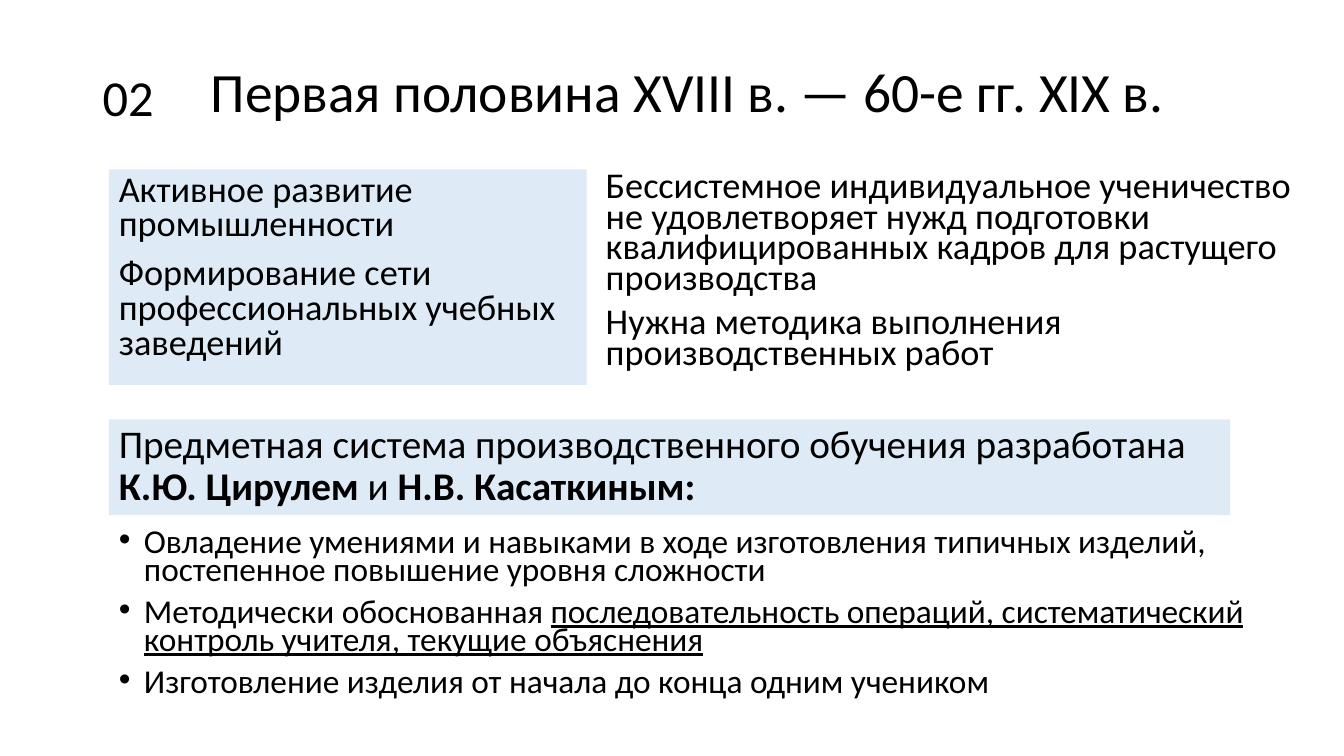
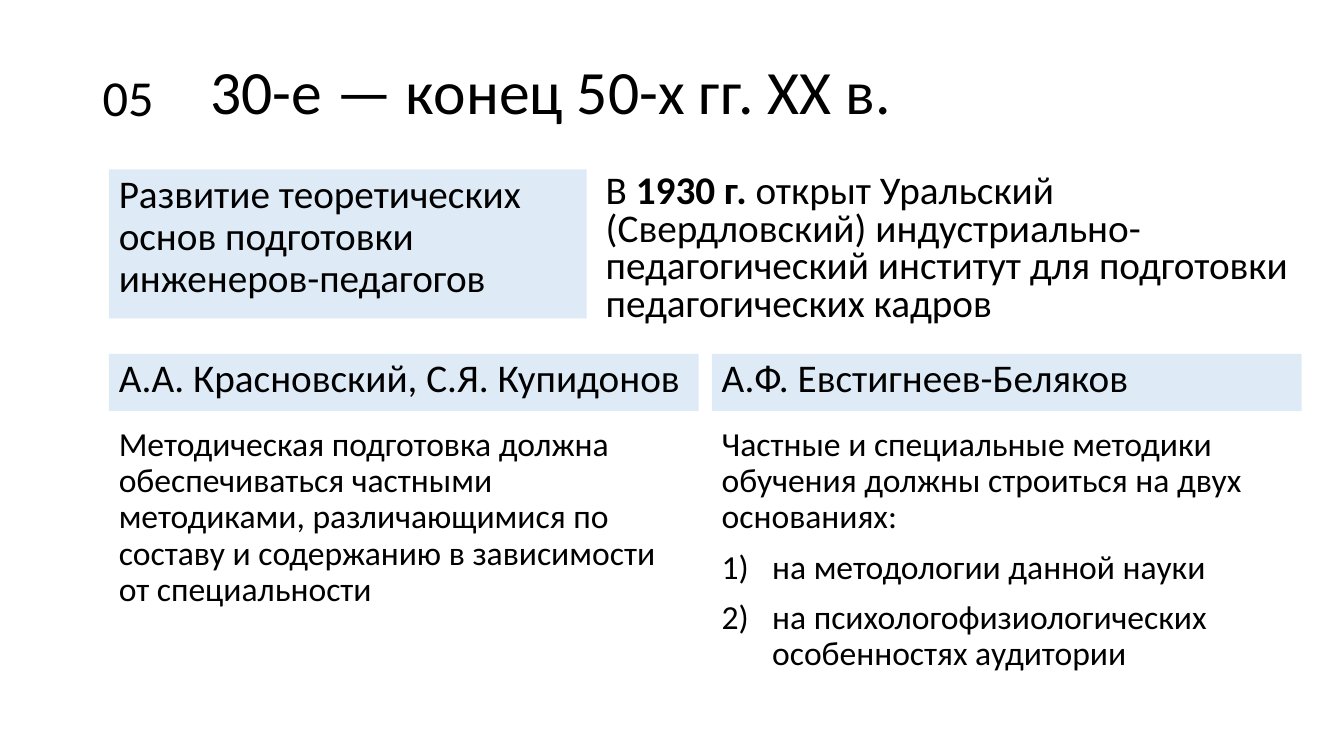
from dataclasses import dataclass

from lxml.etree import SubElement
from pptx import Presentation
from pptx.dml.color import RGBColor
from pptx.enum.shapes import MSO_SHAPE as Preset
from pptx.enum.text import MSO_ANCHOR as Anchor, PP_ALIGN as Align
from pptx.oxml.ns import qn
from pptx.util import Inches, Pt


@dataclass(frozen=True)
class Theme:
    font: str = "Calibri"
    bullet_font: str = "Arial"
    ink: RGBColor = RGBColor(0x00, 0x00, 0x00)
    band: RGBColor = RGBColor(0xDE, 0xEB, 0xF7)
    title: float = 44
    long_title: float = 39.6
    number: float = 36
    lead: float = 28
    dense: float = 25.9
    body: float = 24
    points: float = 23.8
    paragraph_gap: float = 10


THEME = Theme()
BOLD = {"bold": True}
UNDERLINE = {"underline": True}

# Shared grid, in inches
LEFT = 1.08
TOP = 1.68
LEAD_WIDTH = 4.74
SIDE_LEFT = 5.91
SIDE_WIDTH = 7.14
COLUMN_WIDTH = 5.85
COLUMN_STEP = 5.98
HEADING_HEIGHT = 0.57
COLUMN_GAP = 0.11


def set_marker(para, kind, value, indent):
    """Give a paragraph a hanging bullet or automatic number."""
    props = para._p.get_or_add_pPr()
    props.set("marL", str(Inches(indent)))
    props.set("indent", str(-Inches(indent)))
    if kind == "buChar":
        SubElement(props, qn("a:buFont")).set("typeface", THEME.bullet_font)
    SubElement(props, qn(f"a:{kind}")).set("char" if kind == "buChar" else "type", value)


def bullet(para):
    set_marker(para, "buChar", "•", 0.25)


def numbered(para):
    set_marker(para, "buAutoNum", "arabicParenR", 0.5)


def add_text(page, place, paragraphs, size, spacing=0.9, filled=False,
             anchor=Anchor.TOP, gap=THEME.paragraph_gap):
    """Place paragraphs, each a (marker, spans) pair or a plain string."""
    bounds = [Inches(length) for length in place]
    if filled:
        box = page.shapes.add_shape(Preset.RECTANGLE, *bounds)
        box.shadow.inherit = False
        box.fill.solid()
        box.fill.fore_color.rgb = THEME.band
        box.line.fill.background()
    else:
        box = page.shapes.add_textbox(*bounds)
    frame = box.text_frame
    frame.word_wrap = True
    frame.vertical_anchor = anchor

    for index, content in enumerate(paragraphs):
        marker, spans = (None, [content]) if isinstance(content, str) else content
        para = frame.paragraphs[0] if index == 0 else frame.add_paragraph()
        layout = {"alignment": Align.LEFT, "line_spacing": spacing,
                  "space_before": Pt(gap)}
        for name, value in layout.items():
            setattr(para, name, value)
        if marker:
            marker(para)
        for part in spans:
            text, emphasis = (part, {}) if isinstance(part, str) else part
            span = para.add_run()
            span.text = text
            span.font.color.rgb = THEME.ink
            for name, value in {"name": THEME.font, "size": Pt(size), **emphasis}.items():
                setattr(span.font, name, value)


def add_header(page, number, title, size, width):
    """Slide number and title along the top."""
    add_text(page, (1.99, 0.4, width, 1.07), [title], size, anchor=Anchor.MIDDLE, gap=0)
    add_text(page, (0.92, 0.61, 1.07, 0.71), [number], THEME.number, spacing=1, gap=0)


def add_context(page, lead, side, size, heights, spacings):
    """Shaded premise on the left, its consequence on the right."""
    add_text(page, (LEFT, TOP, LEAD_WIDTH, heights[0]), lead, size, spacings[0], filled=True)
    add_text(page, (SIDE_LEFT, TOP, SIDE_WIDTH, heights[1]), side, size, spacings[1])


def add_column(page, left, top, heading, paragraphs):
    """Shaded name band with the author's position below it."""
    add_text(page, (left, top, COLUMN_WIDTH, HEADING_HEIGHT), [heading], THEME.lead, filled=True)
    body_top = top + HEADING_HEIGHT + COLUMN_GAP
    add_text(page, (left, body_top, COLUMN_WIDTH - COLUMN_GAP, 2.55), paragraphs, THEME.body)


def build_subject_system(page):
    add_header(page, "02", "Первая половина XVIII в. — 60-е гг. XIX в.",
               THEME.long_title, 11.52)
    add_context(
        page,
        ["Активное развитие промышленности",
         "Формирование сети профессиональных учебных заведений"],
        ["Бессистемное индивидуальное ученичество не удовлетворяет нужд подготовки "
         "квалифицированных кадров для растущего производства",
         "Нужна методика выполнения производственных работ"],
        THEME.dense, heights=(2.14, 2.14), spacings=(0.8, 0.7))

    # Authors of the system
    authors = ["Предметная система производственного обучения разработана ",
               ("К.Ю. Цирулем ", BOLD), "и", (" Н.В. Касаткиным:", BOLD)]
    add_text(page, (LEFT, 4.16, 11.12, 0.95), [(None, authors)], THEME.lead, filled=True)

    # Features of the system
    features = [
        ["Овладение умениями и навыками в ходе изготовления типичных изделий, "
         "постепенное повышение уровня сложности"],
        ["Методически обоснованная ",
         ("последовательность операций, систематический контроль учителя, "
          "текущие объяснения", UNDERLINE)],
        ["Изготовление изделия от начала до конца одним учеником"],
    ]
    add_text(page, (LEFT, 5.22, 11.63, 1.85), [(bullet, spans) for spans in features],
             THEME.points, spacing=0.7)


def build_teacher_training(page):
    add_header(page, "05", "30-е — конец 50-х гг. XX в.", THEME.title, 10.43)
    institute = ["В ", ("1930 г.", BOLD),
                 " открыт Уральский (Свердловский) индустриально-педагогический "
                 "институт для подготовки педагогических кадров"]
    add_context(page, ["Развитие теоретических основ подготовки инженеров-педагогов"],
                [(None, institute)], THEME.lead, heights=(1.48, 1.72), spacings=(0.9, 0.8))

    # Two schools of thought side by side
    columns = [
        ("А.А. Красновский, С.Я. Купидонов",
         ["Методическая подготовка должна обеспечиваться частными методиками, "
          "различающимися по составу и содержанию в зависимости от специальности"]),
        ("А.Ф. Евстигнеев-Беляков",
         ["Частные и специальные методики обучения должны строиться на двух основаниях:",
          (numbered, ["на методологии данной науки"]),
          (numbered, ["на психологофизиологических особенностях аудитории"])]),
    ]
    for index, (heading, paragraphs) in enumerate(columns):
        add_column(page, LEFT + index * COLUMN_STEP, 3.51, heading, paragraphs)


def main():
    deck = Presentation()
    deck.slide_width, deck.slide_height = Inches(13.33), Inches(7.5)
    blank = deck.slide_layouts[6]
    for build in (build_subject_system, build_teacher_training):
        build(deck.slides.add_slide(blank))
    deck.save("out.pptx")


if __name__ == "__main__":
    main()
